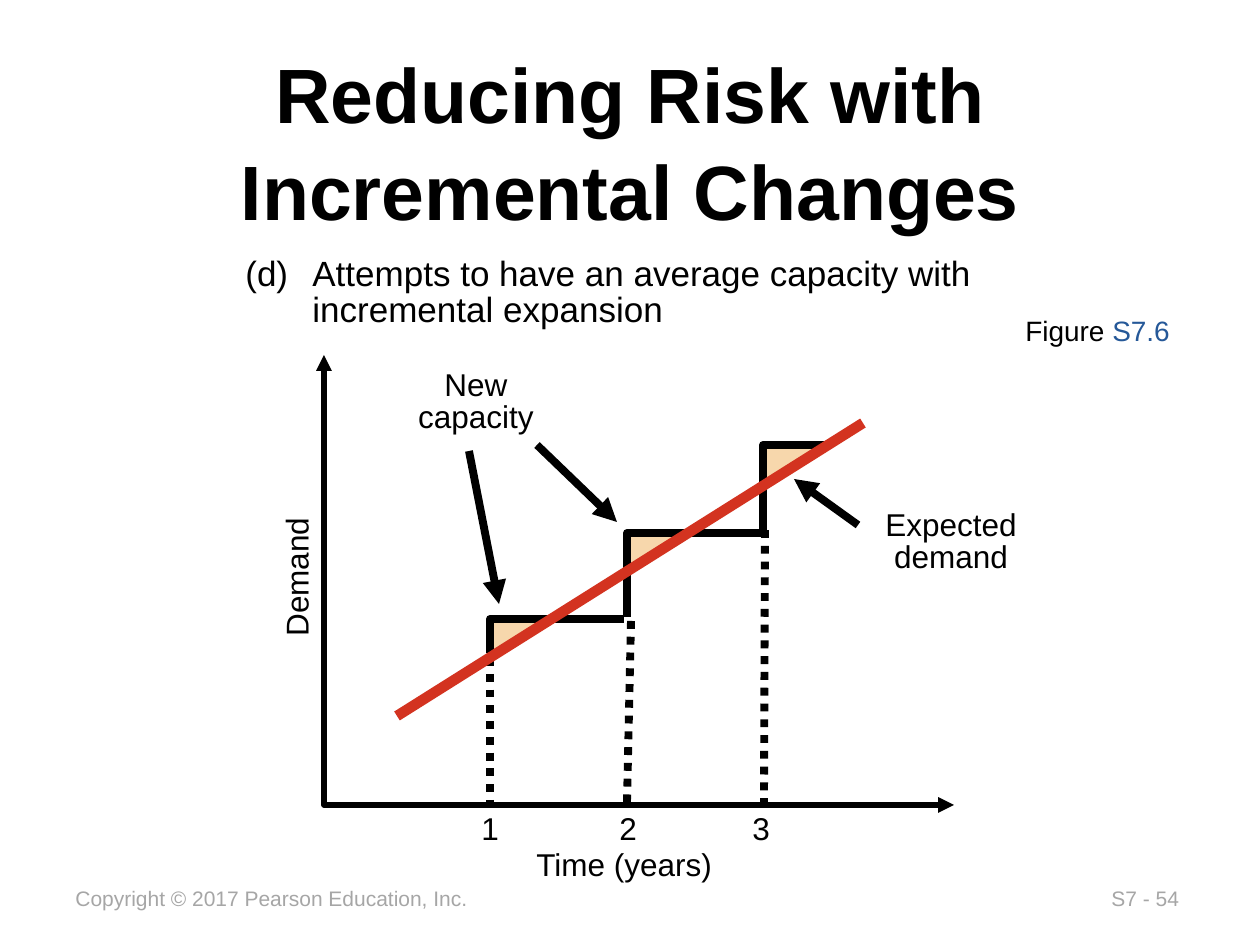
"""Build the slide on reducing risk with incremental capacity changes."""
from lxml.etree import SubElement
from pptx import Presentation
from pptx.dml.color import RGBColor
from pptx.enum.dml import MSO_LINE
from pptx.enum.shapes import MSO_CONNECTOR
from pptx.enum.text import MSO_ANCHOR, MSO_AUTO_SIZE, PP_ALIGN
from pptx.oxml.ns import qn
from pptx.util import Emu, Pt

EMU_PER_PX = 914400 / 126
BLACK = RGBColor(0x00, 0x00, 0x00)
GRAY = RGBColor(0xA6, 0xA6, 0xA6)
BLUE = RGBColor(0x25, 0x58, 0x98)
RED = RGBColor(0xD3, 0x33, 0x20)
PEACH = RGBColor(0xF7, 0xD7, 0xAC)

TITLE = "Reducing Risk with Incremental Changes"
TITLE_BOX = (95, 35, 1071, 208)
YEARS = [("1", 469), ("2", 607), ("3", 740)]
TEXTS = [
    ("S7 - 54", (1099, 879, 96, 38), dict(size=12, color=GRAY)),
    ("Copyright © 2017 Pearson Education, Inc.", (63, 879, 422, 38),
     dict(size=12, color=GRAY)),
    ("(d)\tAttempts to have an average capacity with incremental expansion",
     (233, 252, 794, 86), dict(size=20, wrap=True, spacing=0.85, hanging=67)),
    ("Expected demand", (854, 505, 194, 78),
     dict(wrap=True, spacing=0.85, align=PP_ALIGN.CENTER)),
    ("New capacity", (388, 365, 176, 78),
     dict(wrap=True, spacing=0.85, align=PP_ALIGN.CENTER)),
    ("Demand", (221, 549, 150, 50), dict(rotation=270)),
    ("Time (years)", (524, 839, 203, 50), {}),
    *[(year, (left, 803, 43, 50), {}) for year, left in YEARS],
    ("Figure ", (1013, 307, 176, 47), dict(size=16, reference="S7.6")),
]

SURPLUS_AREAS = [
    [(490, 621), (544, 621), (490, 658)],
    [(629, 530), (687, 530), (627, 571)],
    [(765, 446), (824, 446), (765, 484)],
]
CAPACITY_STEPS = [
    [(490, 653), (490, 619), (624, 619)],
    [(627, 617), (627, 533), (761, 533)],
    [(763, 530), (763, 445), (829, 445)],
]
YEAR_MARKERS = [
    (490, 658, 490, 805),
    (631, 621, 627, 803),
    (765, 530, 764, 803),
]
DEMAND_LINE = (397, 716, 863, 423)
POINTERS = [
    (858, 525, 794, 479),
    (469, 451, 499, 604),
    (537, 445, 617, 522),
]
AXES = [(324, 355), (324, 805), (954, 805)]


def px(value):
    return Emu(round(value * EMU_PER_PX))


def write_text(shape, text, size=18, color=BLACK, bold=False, wrap=False,
               align=PP_ALIGN.LEFT, spacing=None, hanging=0, rotation=0,
               reference=None):
    shape.rotation = rotation
    frame = shape.text_frame
    frame.word_wrap = wrap
    frame.auto_size = MSO_AUTO_SIZE.NONE
    paragraph = frame.paragraphs[0]
    paragraph.alignment = align
    if spacing:
        paragraph.line_spacing = spacing
    if hanging:
        properties = paragraph._p.get_or_add_pPr()
        properties.set("marL", str(px(hanging)))
        properties.set("indent", str(-px(hanging)))
    for words, run_color in [(text, color), (reference, BLUE)]:
        if words:
            run = paragraph.add_run()
            run.text = words
            run.font.name = "Arial"
            run.font.size = Pt(size)
            run.font.bold = bold
            run.font.color.rgb = run_color


def style_line(shape, color, width, dash=None, arrow_ends=()):
    shape.line.color.rgb = color
    shape.line.width = Pt(width)
    if dash:
        shape.line.dash_style = dash
    outline = shape._element.spPr.find(qn("a:ln"))
    for end in arrow_ends:
        SubElement(outline, qn(f"a:{end}"), type="triangle")


def add_line(slide, ends, color=BLACK, width=4.5, **line_format):
    connector = slide.shapes.add_connector(
        MSO_CONNECTOR.STRAIGHT, *[px(value) for value in ends])
    style_line(connector, color, width, **line_format)
    SubElement(connector._element.spPr, qn("a:effectLst"))


def add_outline(slide, points, fill=None, width=4.5, **line_format):
    builder = slide.shapes.build_freeform(*points[0], scale=EMU_PER_PX)
    builder.add_line_segments(points[1:], close=fill is not None)
    shape = builder.convert_to_shape()
    shape.shadow.inherit = False
    if fill is None:
        shape.fill.background()
        style_line(shape, BLACK, width, **line_format)
    else:
        shape.fill.solid()
        shape.fill.fore_color.rgb = fill
        shape.line.fill.background()


def main():
    presentation = Presentation()
    presentation.slide_width = px(1260)
    presentation.slide_height = px(945)
    slide = presentation.slides.add_slide(presentation.slide_layouts[5])

    title = slide.shapes.title
    title.left, title.top, title.width, title.height = map(px, TITLE_BOX)
    title.text_frame.vertical_anchor = MSO_ANCHOR.MIDDLE
    write_text(title, TITLE, size=44, bold=True, wrap=True,
               align=PP_ALIGN.CENTER, spacing=1.05)

    for area in SURPLUS_AREAS:
        add_outline(slide, area, fill=PEACH)
    for step in CAPACITY_STEPS:
        add_outline(slide, step)
    for marker in YEAR_MARKERS:
        add_line(slide, marker, dash=MSO_LINE.ROUND_DOT)
    add_line(slide, DEMAND_LINE, color=RED, width=6)
    for pointer in POINTERS:
        add_line(slide, pointer, arrow_ends=["tailEnd"])
    add_outline(slide, AXES, width=3, arrow_ends=["headEnd", "tailEnd"])

    for text, box, text_format in TEXTS:
        write_text(slide.shapes.add_textbox(*map(px, box)), text, **text_format)

    presentation.save("out.pptx")


if __name__ == "__main__":
    main()
